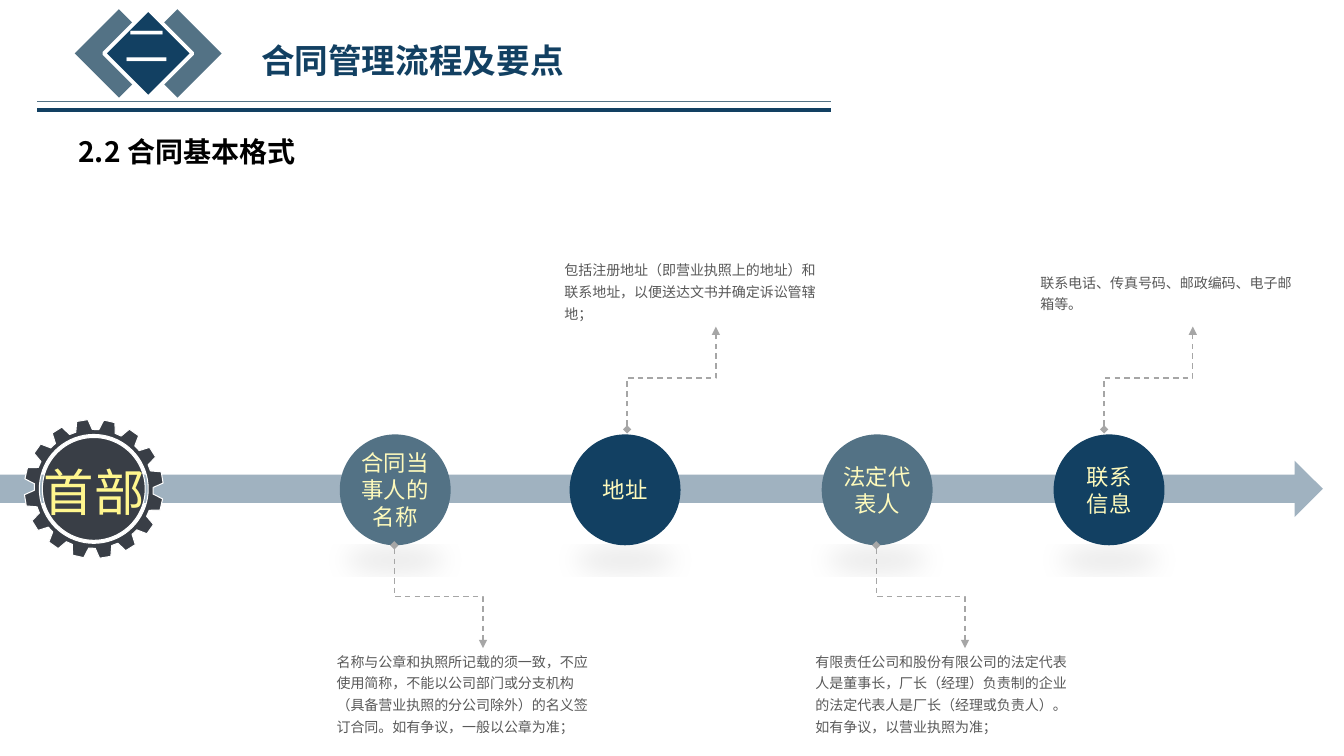
from math import cos, sin, radians

from lxml import etree
from pptx import Presentation
from pptx.dml.color import RGBColor
from pptx.enum.dml import MSO_LINE
from pptx.enum.shapes import MSO_CONNECTOR, MSO_SHAPE
from pptx.enum.text import MSO_ANCHOR, MSO_AUTO_SIZE, PP_ALIGN
from pptx.oxml.ns import qn
from pptx.util import Inches, Pt

NAVY = RGBColor(0x12, 0x40, 0x62)
SLATE = RGBColor(0x53, 0x72, 0x85)
CHARCOAL = RGBColor(0x39, 0x3E, 0x46)
GREY = RGBColor(0xA6, 0xA6, 0xA6)
TEXT_GREY = RGBColor(0x59, 0x59, 0x59)
CREAM = RGBColor(0xFE, 0xFA, 0xBC)
YELLOW = RGBColor(0xFF, 0xF6, 0x8E)
WHITE = RGBColor(0xFF, 0xFF, 0xFF)
BLACK = RGBColor(0, 0, 0)

prs = Presentation()
prs.slide_width, prs.slide_height = Inches(13.33), Inches(7.5)
slide = prs.slides.add_slide(prs.slide_layouts[5])
shapes = slide.shapes


def write(shape, text, size, font_name, color, align=PP_ALIGN.LEFT, bold=False,
          wrap=False, spacing=None, anchor=MSO_ANCHOR.TOP, fit=MSO_AUTO_SIZE.SHAPE_TO_FIT_TEXT):
    frame = shape.text_frame
    frame.text = text
    frame.word_wrap = wrap
    frame.auto_size = fit
    frame.vertical_anchor = anchor
    for paragraph in frame.paragraphs:
        paragraph.alignment = align
        paragraph.line_spacing = spacing
        font = paragraph.font
        font.size, font.name, font.bold = Pt(size), font_name, bold
        font.color.rgb = color
        etree.SubElement(font._element, qn("a:ea")).set("typeface", "Noto Sans CJK SC")


def paint(shape, fill, line=None, width=0.75):
    shape.shadow.inherit = False
    shape.fill.solid()
    shape.fill.fore_color.rgb = fill
    if line is None:
        shape.line.fill.background()
    else:
        shape.line.color.rgb = line
        shape.line.width = Pt(width)


# Header: title, double rule and section number in diamonds
title = shapes.title
title.left, title.top, title.width, title.height = [Inches(v) for v in (2.49, 0.35, 3.23, 0.5)]
write(title, "合同管理流程及要点", 24, "Montserrat", NAVY, bold=True)

for y, color, width in [(1.01, SLATE, 1), (1.09, NAVY, 3)]:
    rule = shapes.add_connector(MSO_CONNECTOR.STRAIGHT, Inches(8.24), Inches(y), Inches(0.37), Inches(y))
    rule.line.color.rgb = color
    rule.line.width = Pt(width)
    etree.SubElement(rule._element.spPr, qn("a:effectLst"))

for x, color, outline in [(1.45, SLATE, None), (0.87, SLATE, None), (1.16, NAVY, WHITE)]:
    diamond = shapes.add_shape(MSO_SHAPE.ROUNDED_RECTANGLE, Inches(x), Inches(0.22), Inches(0.62), Inches(0.62))
    diamond.adjustments[0] = 0
    diamond.rotation = 45
    paint(diamond, color, outline, 2.75)

section = shapes.add_textbox(Inches(1.14), Inches(0.13), Inches(0.65), Inches(0.64))
write(section, "二", 32, "Roboto Condensed", WHITE)

subtitle = shapes.add_textbox(Inches(0.68), Inches(1.29), Inches(2.46), Inches(0.44))
write(subtitle, "2.2 合同基本格式", 20, "Noto Sans CJK SC", BLACK, bold=True)

# Timeline arrow, 40 % opaque
timeline = shapes.add_shape(MSO_SHAPE.RIGHT_ARROW, 0, Inches(4.57), Inches(13.12), Inches(0.56))
paint(timeline, NAVY)
timeline_color = timeline._element.spPr.find(qn("a:solidFill"))[0]
etree.SubElement(timeline_color, qn("a:alpha")).set("val", "40000")

# Steps: circle left, colour, label, connector start x, points down, note box, note
steps = [
    (3.37, SLATE, "合同当事人的名称", 3.91, True, (3.24, 6.38, 0.98),
     "名称与公章和执照所记载的须一致，不应使用简称，不能以公司部门或分支机构（具备营业执照的分公司除外）的名义签订合同。如有争议，一般以公章为准；"),
    (5.65, NAVY, "地址", 6.22, False, (5.5, 2.5, 0.76),
     "包括注册地址（即营业执照上的地址）和联系地址，以便送达文书并确定诉讼管辖地；"),
    (8.15, SLATE, "法定代表人", 8.69, True, (7.99, 6.38, 0.98),
     "有限责任公司和股份有限公司的法定代表人是董事长，厂长（经理）负责制的企业的法定代表人是厂长（经理或负责人）。如有争议，以营业执照为准；"),
    (10.45, NAVY, "联系\n信息", 10.95, False, (10.22, 2.62, 0.54),
     "联系电话、传真号码、邮政编码、电子邮箱等。"),
]
RUN, RISE = 0.88, 1.02

for left, color, label, start_x, down, (note_x, note_y, note_h), note_text in steps:
    circle = shapes.add_shape(MSO_SHAPE.OVAL, Inches(left), Inches(4.31), Inches(1.1), Inches(1.1))
    paint(circle, color)
    circle.text_frame.margin_left = circle.text_frame.margin_right = 0
    write(circle, label, 16, "Roboto Condensed", CREAM, PP_ALIGN.CENTER, wrap=True,
          anchor=MSO_ANCHOR.MIDDLE, fit=MSO_AUTO_SIZE.NONE)

    # Flattened soft shadow below the circle
    effects = circle._element.spPr.find(qn("a:effectLst"))
    shadow = etree.SubElement(effects, qn("a:outerShdw"), blurRad=str(Pt(19)), dist=str(Pt(3)),
                              dir="5400000", sx="90000", sy="-19000", algn="b", rotWithShape="0")
    shade = etree.SubElement(shadow, qn("a:srgbClr"), val="000000")
    etree.SubElement(shade, qn("a:alpha"), val="10000")

    # Elbow that leaves vertically: turned a quarter about its centre
    center_x = start_x + RUN / 2
    center_y = 5.92 if down else 3.75
    elbow = shapes.add_connector(
        MSO_CONNECTOR.ELBOW, Inches(center_x - RISE / 2), Inches(center_y - RUN / 2),
        Inches(center_x + RISE / 2), Inches(center_y + RUN / 2))
    xfrm = elbow._element.spPr.find(qn("a:xfrm"))
    xfrm.set("rot", "16200000" if down else "5400000")
    xfrm.set("flipH", "1")
    if not down:
        xfrm.set("flipV", "1")
    elbow.line.color.rgb = GREY
    elbow.line.width = Pt(1)
    elbow.line.dash_style = MSO_LINE.DASH
    outline = elbow._element.spPr.find(qn("a:ln"))
    etree.SubElement(outline, qn("a:headEnd"), type="diamond")
    etree.SubElement(outline, qn("a:tailEnd"), type="triangle")
    etree.SubElement(elbow._element.spPr, qn("a:effectLst"))

    note = shapes.add_textbox(Inches(note_x), Inches(note_y), Inches(2.76), Inches(note_h))
    write(note, note_text, 10, "Roboto Condensed", TEXT_GREY, wrap=True, spacing=1.3)

# Gear: 16 teeth around a round hole, with a disc inside
GEAR_X, GEAR_Y = 0.93, 4.85
TEETH = 16
tooth_corners = [(0.59, -8.1), (0.69, -4.7), (0.69, 4.7), (0.59, 8.1)]
rim = [(radius, 13 + tooth * 360 / TEETH + offset)
       for tooth in range(TEETH) for radius, offset in tooth_corners]
hole = [(0.54, -angle) for angle in range(0, 360, 5)]
rim_points, hole_points = [
    [(Inches(GEAR_X + r * cos(radians(a))), Inches(GEAR_Y + r * sin(radians(a)))) for r, a in contour]
    for contour in (rim, hole)]
builder = shapes.build_freeform(*rim_points[0])
builder.add_line_segments(rim_points[1:], close=True)
builder.move_to(*hole_points[0])
builder.add_line_segments(hole_points[1:], close=True)
paint(builder.convert_to_shape(), CHARCOAL, WHITE)

disc = shapes.add_shape(MSO_SHAPE.OVAL, Inches(GEAR_X - 0.51), Inches(GEAR_Y - 0.51), Inches(1.02), Inches(1.02))
paint(disc, CHARCOAL, WHITE)

gear_label = shapes.add_textbox(Inches(0.33), Inches(4.53), Inches(1.21), Inches(0.71))
write(gear_label, "首部", 36, "Roboto", YELLOW, PP_ALIGN.CENTER)

prs.save("out.pptx")
